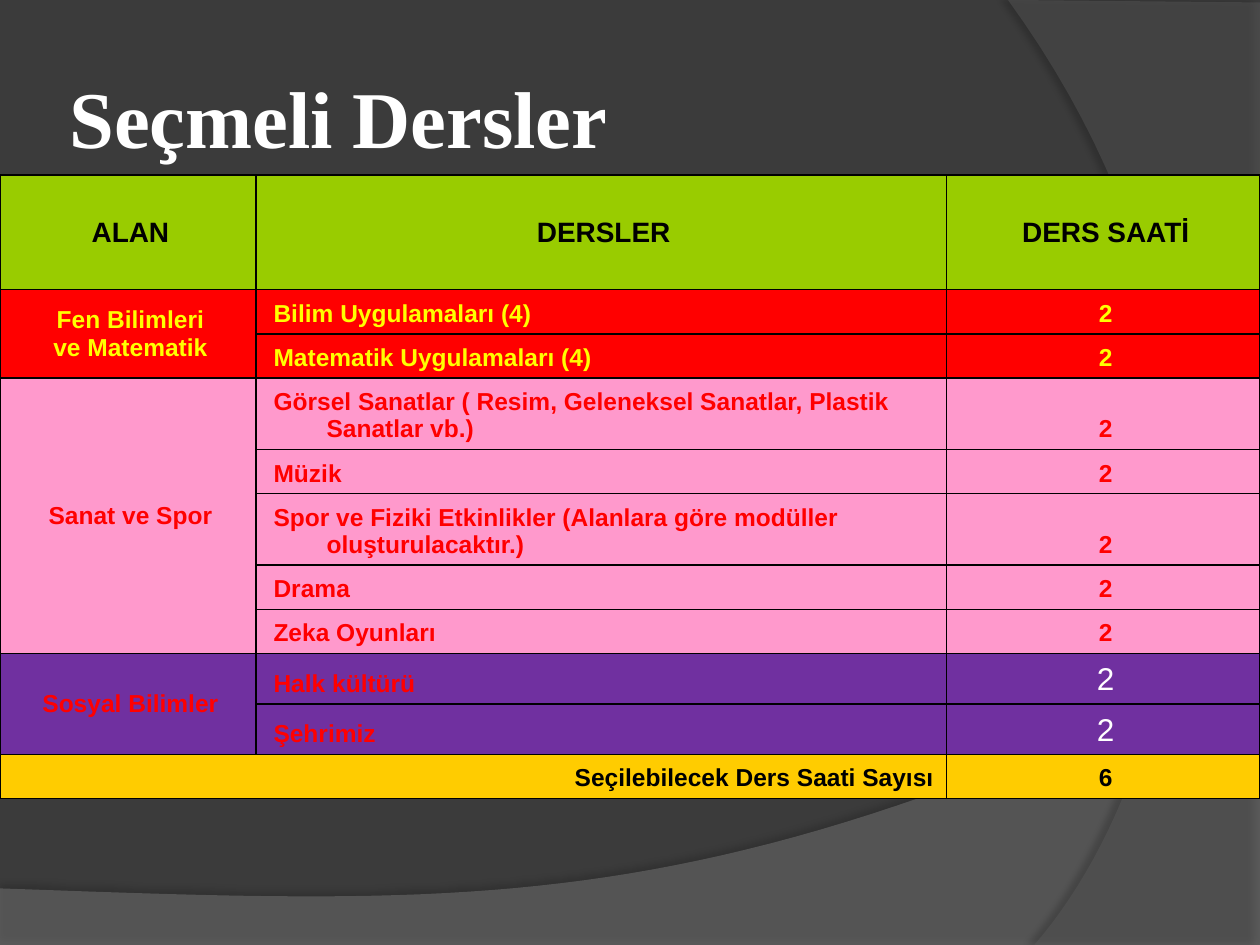
import dataclasses

import lxml.etree
import pptx
import pptx.dml.color
import pptx.enum.text
import pptx.oxml.ns
import pptx.util

Cm = pptx.util.Cm
Pt = pptx.util.Pt
Align = pptx.enum.text.PP_ALIGN
Anchor = pptx.enum.text.MSO_ANCHOR
qn = pptx.oxml.ns.qn


@dataclasses.dataclass(frozen=True)
class Theme:
    background: str = "3B3B3B"
    lower_wave: str = "7F7F7F"
    right_wave: str = "5E5E5E"
    black: str = "000000"
    white: str = "FFFFFF"
    green: str = "99CC00"
    red: str = "FF0000"
    yellow: str = "FFFF00"
    pink: str = "FF99CC"
    purple: str = "7030A0"
    gold: str = "FFCC00"
    title_font: str = "Times New Roman"
    body_font: str = "Arial"
    title_size: int = 46
    large_size: int = 18
    header_size: int = 16
    body_size: int = 14


def rgb(color):
    return pptx.dml.color.RGBColor.from_string(color)


def add_child(parent, tag, **attributes):
    values = {name: str(value) for name, value in attributes.items()}
    return lxml.etree.SubElement(parent, qn(tag), values)


def curve(start, first, second, end, steps=48):
    points = []
    for step in range(1, steps + 1):
        t = step / steps
        weights = ((1 - t) ** 3, 3 * t * (1 - t) ** 2, 3 * t * t * (1 - t), t ** 3)
        points.append(tuple(
            sum(weight * value for weight, value in zip(weights, values))
            for values in zip(start, first, second, end)
        ))
    return points


class SlideBuilder:
    def __init__(self, deck, theme):
        self.theme = theme
        self.page = deck.slides.add_slide(deck.slide_layouts[6])
        fill = self.page.background.fill
        fill.solid()
        fill.fore_color.rgb = rgb(theme.background)

    def wave(self, points, color, opacity, shadow_opacity, distance, angle):
        corners = [(Cm(x), Cm(y)) for x, y in points]
        builder = self.page.shapes.build_freeform(*corners[0])
        builder.add_line_segments(corners[1:], close=True)
        shape = builder.convert_to_shape()
        shape.fill.solid()
        shape.fill.fore_color.rgb = rgb(color)
        shape.line.fill.background()
        shape.shadow.inherit = False
        properties = shape._element.spPr
        fill_color = properties.find(qn("a:solidFill")).find(qn("a:srgbClr"))
        add_child(fill_color, "a:alpha", val=opacity * 1000)
        shadow = add_child(
            properties.find(qn("a:effectLst")), "a:outerShdw",
            blurRad=Pt(4), dist=Pt(distance), dir=angle * 60000, rotWithShape=0,
        )
        shadow_color = add_child(shadow, "a:srgbClr", val=self.theme.black)
        add_child(shadow_color, "a:alpha", val=shadow_opacity * 1000)

    def span(self, para, text, size, color, font, bold=True):
        span = para.add_run()
        span.text = text
        span.font.size = Pt(size)
        span.font.name = font
        span.font.bold = bold
        span.font.color.rgb = rgb(color)

    def title(self, text, left, top, width, height):
        box = self.page.shapes.add_textbox(Cm(left), Cm(top), Cm(width), Cm(height))
        frame = box.text_frame
        frame.word_wrap = True
        frame.vertical_anchor = Anchor.MIDDLE
        frame.margin_left = frame.margin_right = Cm(0.13)
        frame.margin_top = frame.margin_bottom = Cm(0.13)
        self.span(frame.paragraphs[0], text, self.theme.title_size,
                  self.theme.white, self.theme.title_font)

    def table(self, left, top, columns, rows):
        frame = self.page.shapes.add_table(
            len(rows), len(columns), Cm(left), Cm(top), Cm(sum(columns)), Cm(sum(rows)))
        table = frame.table
        table.first_row = table.horz_banding = False
        for column, width in zip(table.columns, columns):
            column.width = Cm(width)
        for row, height in zip(table.rows, rows):
            row.height = Cm(height)
        return table

    def paint(self, cell, color):
        cell.fill.solid()
        cell.fill.fore_color.rgb = rgb(color)
        properties = cell._tc.get_or_add_tcPr()
        for position, side in enumerate(("a:lnL", "a:lnR", "a:lnT", "a:lnB")):
            border = add_child(properties, side, w=Pt(1))
            add_child(add_child(border, "a:solidFill"), "a:srgbClr", val=self.theme.black)
            properties.insert(position, border)

    def cell_text(self, cell, lines, color, align=Align.CENTER, anchor=Anchor.BOTTOM,
                  size=None, bold=True):
        cell.vertical_anchor = anchor
        frame = cell.text_frame
        for index, line in enumerate(lines):
            para = frame.add_paragraph() if index else frame.paragraphs[0]
            para.alignment = align
            properties = para._p.get_or_add_pPr()
            properties.set("marL", str(Cm(1.17)))
            properties.set("indent", str(Cm(-1.07)))
            self.span(para, line, size or self.theme.body_size, color,
                      self.theme.body_font, bold)


def main():
    theme = Theme()
    deck = pptx.Presentation()
    deck.slide_width, deck.slide_height = Cm(25.4), Cm(19.05)
    slide = SlideBuilder(deck, theme)

    lower_edge = curve((25.4, 13.21), (14.2, 18.52), (9.93, 18.26), (0, 17.91))
    slide.wave([(0, 19.05), (25.4, 19.05), (25.4, 13.21)] + lower_edge,
               theme.lower_wave, 45, 35, 3.5, 270)
    right_edge = curve((20.85, 19.05), (23.75, 15.72), (25.86, 7.62), (20.32, 0))
    slide.wave([(25.4, 0.05), (25.4, 19.05), (20.85, 19.05)] + right_edge,
               theme.right_wave, 40, 45, 4, 180)
    slide.title("Seçmeli Dersler", 1.27, 0.76, 20.75, 3.18)

    science_hours = {"color": theme.yellow}
    art_hours = {"color": theme.red}
    social_hours = {"color": theme.white, "size": theme.large_size, "bold": False}
    areas = [
        (["Fen Bilimleri", "ve Matematik"], theme.red, theme.yellow, science_hours,
         ["Bilim Uygulamaları (4)", "Matematik Uygulamaları (4)"]),
        (["Sanat ve Spor"], theme.pink, theme.red, art_hours,
         ["Görsel Sanatlar ( Resim, Geleneksel Sanatlar, Plastik Sanatlar vb.)",
          "Müzik",
          "Spor ve Fiziki Etkinlikler (Alanlara göre modüller oluşturulacaktır.)",
          "Drama",
          "Zeka Oyunları"]),
        (["Sosyal Bilimler"], theme.purple, theme.red, social_hours,
         ["Halk kültürü", "Şehrimiz"]),
    ]
    course_count = sum(len(courses) for *_, courses in areas)
    table = slide.table(0, 3.53, [5.16, 13.92, 6.32], [2.31] + [0.89] * (course_count + 1))
    fills = [theme.green]
    for _, fill, _, _, courses in areas:
        fills += [fill] * len(courses)
    fills.append(theme.gold)
    for row, fill in enumerate(fills):
        for column in range(3):
            slide.paint(table.cell(row, column), fill)

    for column, heading in enumerate(("ALAN", "DERSLER", "DERS SAATİ")):
        slide.cell_text(table.cell(0, column), [heading], theme.black,
                        anchor=Anchor.MIDDLE, size=theme.header_size)
    row = 1
    for area, _, color, hours, courses in areas:
        area_cell = table.cell(row, 0)
        area_cell.merge(table.cell(row + len(courses) - 1, 0))
        slide.cell_text(area_cell, area, color, anchor=Anchor.MIDDLE)
        for course in courses:
            slide.cell_text(table.cell(row, 1), [course], color, align=Align.LEFT)
            slide.cell_text(table.cell(row, 2), ["2"], **hours)
            row += 1
    total_cell = table.cell(row, 0)
    total_cell.merge(table.cell(row, 1))
    slide.cell_text(total_cell, ["Seçilebilecek Ders Saati Sayısı"], theme.black,
                    align=Align.RIGHT)
    slide.cell_text(table.cell(row, 2), ["6"], theme.black)

    deck.save("out.pptx")


if __name__ == "__main__":
    main()
